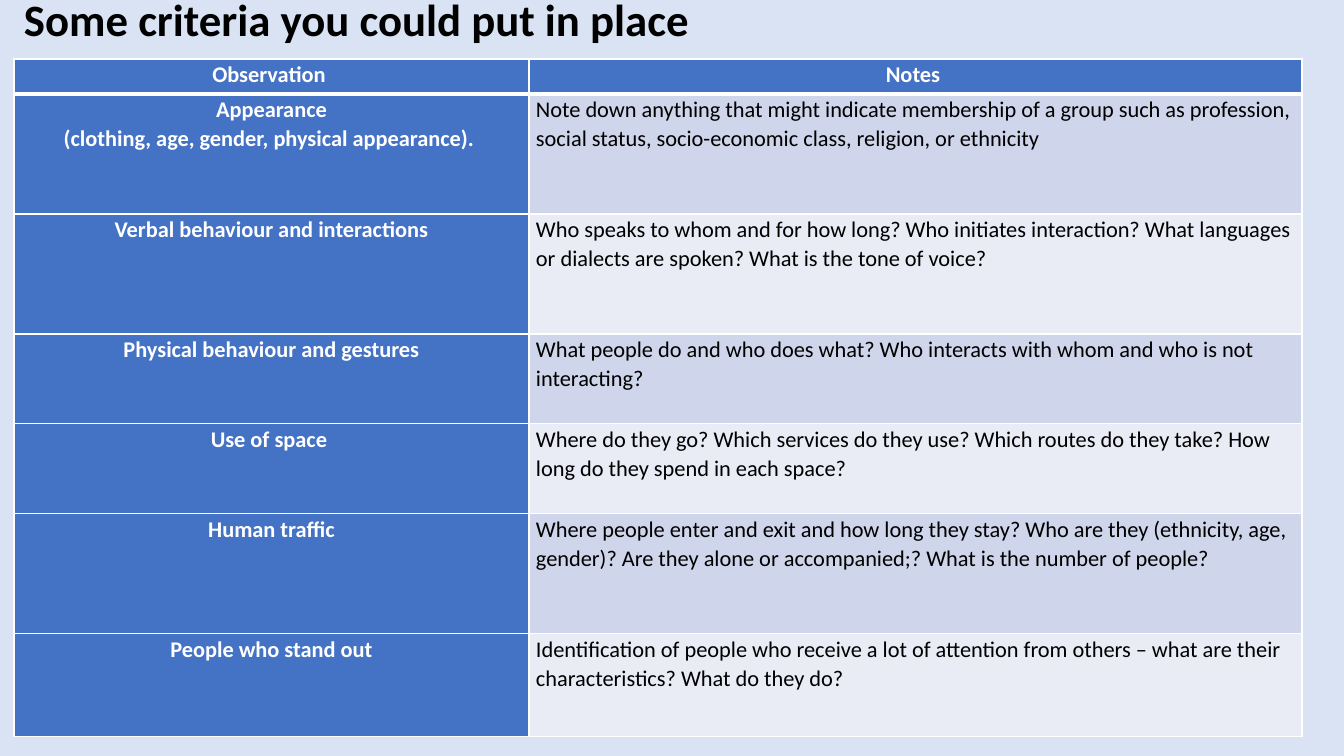
from dataclasses import dataclass

from lxml import etree
from pptx import Presentation
from pptx import util as u
from pptx.dml.color import RGBColor
from pptx.enum import text
from pptx.oxml import ns

PX = 12192000 / 1344
FONT = "Calibri"
COLOURS = {
    "background": "DAE3F3",
    "heading": "4472C4",
    "odd": "CFD5EA",
    "even": "E9EBF5",
    "light": "FFFFFF",
    "dark": "000000",
}


@dataclass
class Criterion:
    observation: str
    notes: str
    height: int


HEADER = Criterion("Observation ", "Notes ", 35)
CRITERIA = [
    Criterion("Appearance\n(clothing, age, gender, physical appearance). ",
              "Note down anything that might indicate membership of a group such as profession, "
              "social status, socio-economic class, religion, or ethnicity", 120),
    Criterion("Verbal behaviour and interactions",
              "Who speaks to whom and for how long? Who initiates interaction? What languages "
              "or dialects are spoken? What is the tone of voice?", 120),
    Criterion("Physical behaviour and gestures",
              "What people do and who does what? Who interacts with whom and who is not "
              "interacting?", 90),
    Criterion("Use of space ",
              "Where do they go? Which services do they use? Which routes do they take? How "
              "long do they spend in each space?", 90),
    Criterion("Human traffic",
              "Where people enter and exit and how long they stay? Who are they (ethnicity, age, "
              "gender)? Are they alone or accompanied;? What is the number of people?", 120),
    Criterion("People who stand out",
              "Identification of people who receive a lot of attention from others – what are their "
              "characteristics? What do they do?", 103),
]
COLUMN_WIDTHS = [515, 773]


def px(length: int) -> u.Emu:
    return u.Emu(round(length * PX))


def colour(name: str) -> RGBColor:
    return RGBColor.from_string(COLOURS[name])


def write(frame, wording: str, size: int, colour_name: str, bold: bool,
          align, line_spacing: float) -> None:
    """Fill a text frame with one paragraph for each line of the wording."""
    for index, line in enumerate(wording.split("\n")):
        paragraph = frame.add_paragraph() if index else frame.paragraphs[0]
        paragraph.alignment = align
        paragraph.line_spacing = line_spacing
        run = paragraph.add_run()
        run.text = line
        run.font.name = FONT
        run.font.size = u.Pt(size)
        run.font.bold = bold
        run.font.color.rgb = colour(colour_name)


def set_borders(cell, top: int, bottom: int) -> None:
    """Draw white borders; top and bottom widths are in points."""
    properties = cell._tc.get_or_add_tcPr()
    widths = {"a:lnL": 1, "a:lnR": 1, "a:lnT": top, "a:lnB": bottom}
    for index, (tag, width) in enumerate(widths.items()):
        line = etree.Element(ns.qn(tag), w=str(u.Pt(width)))
        fill = etree.SubElement(line, ns.qn("a:solidFill"))
        etree.SubElement(fill, ns.qn("a:srgbClr"), val=COLOURS["light"])
        properties.insert(index, line)


def add_title(slide, wording: str) -> None:
    box = slide.shapes.add_textbox(px(14), px(-51), px(1159), px(146))
    frame = box.text_frame
    frame.word_wrap = True
    frame.vertical_anchor = text.MSO_ANCHOR.MIDDLE
    write(frame, wording, 32, "dark", True, text.PP_ALIGN.LEFT, 0.9)


def add_criteria_table(slide) -> None:
    rows = [HEADER, *CRITERIA]
    table = slide.shapes.add_table(
        len(rows), len(COLUMN_WIDTHS), px(14), px(59),
        px(sum(COLUMN_WIDTHS)), px(sum(row.height for row in rows))).table
    for column, width in zip(table.columns, COLUMN_WIDTHS):
        column.width = px(width)
    for row_index, row in enumerate(rows):
        table.rows[row_index].height = px(row.height)
        for column_index, wording in enumerate((row.observation, row.notes)):
            cell = table.cell(row_index, column_index)
            heading = row_index == 0 or column_index == 0
            band = "odd" if row_index % 2 else "even"
            cell.margin_left = cell.margin_right = px(7)
            cell.margin_top = cell.margin_bottom = 0
            cell.fill.solid()
            cell.fill.fore_color.rgb = colour("heading" if heading else band)
            set_borders(cell, top=3 if row_index == 1 else 1,
                        bottom=3 if row_index == 0 else 1)
            write(cell.text_frame, wording, 16, "light" if heading else "dark", heading,
                  text.PP_ALIGN.CENTER if heading else text.PP_ALIGN.LEFT, 1.07)


def main() -> None:
    presentation = Presentation()
    presentation.slide_width = px(1344)
    presentation.slide_height = px(756)
    slide = presentation.slides.add_slide(presentation.slide_layouts[6])
    slide.background.fill.solid()
    slide.background.fill.fore_color.rgb = colour("background")
    add_title(slide, "Some criteria you could put in place")
    add_criteria_table(slide)
    presentation.save("out.pptx")


if __name__ == "__main__":
    main()
